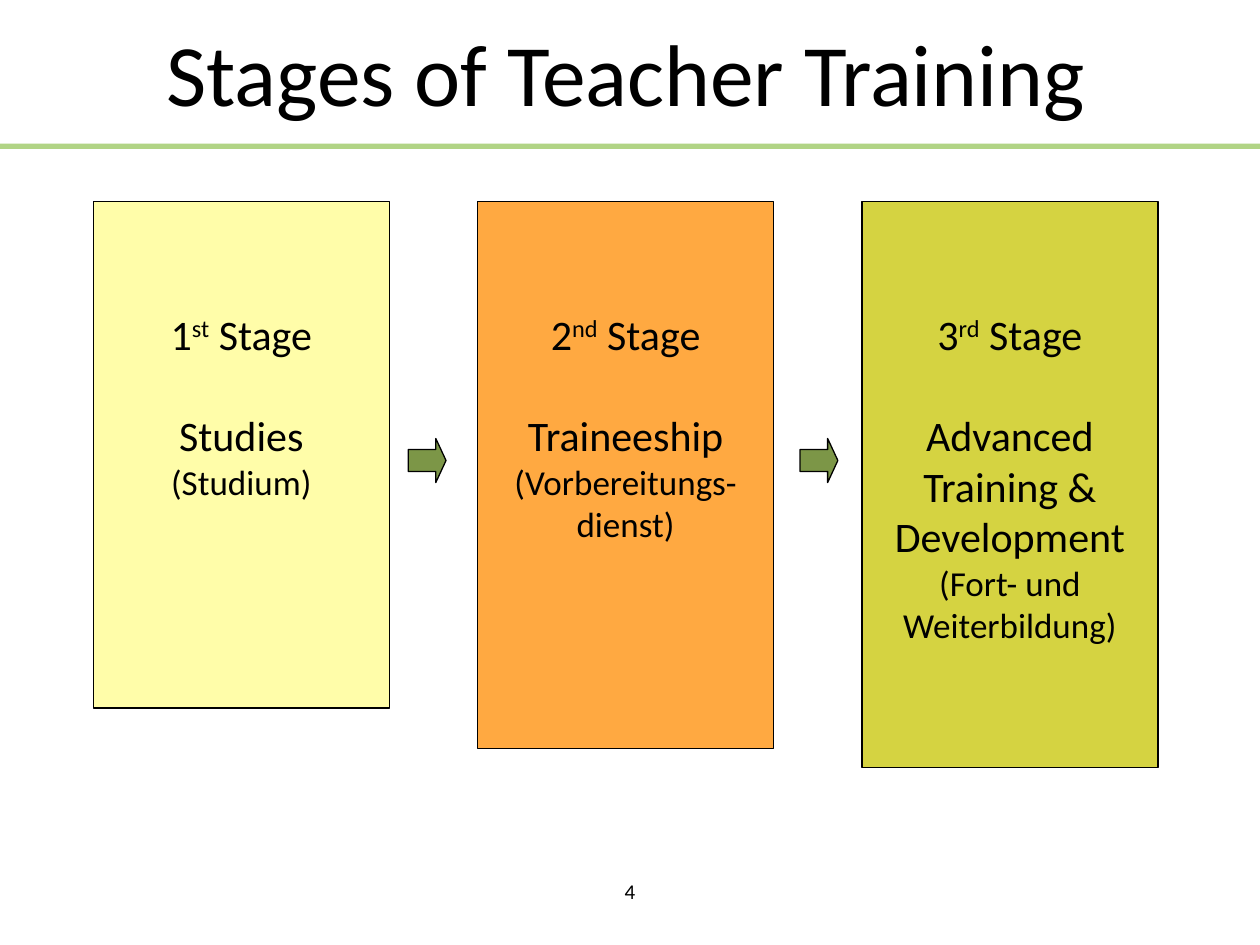
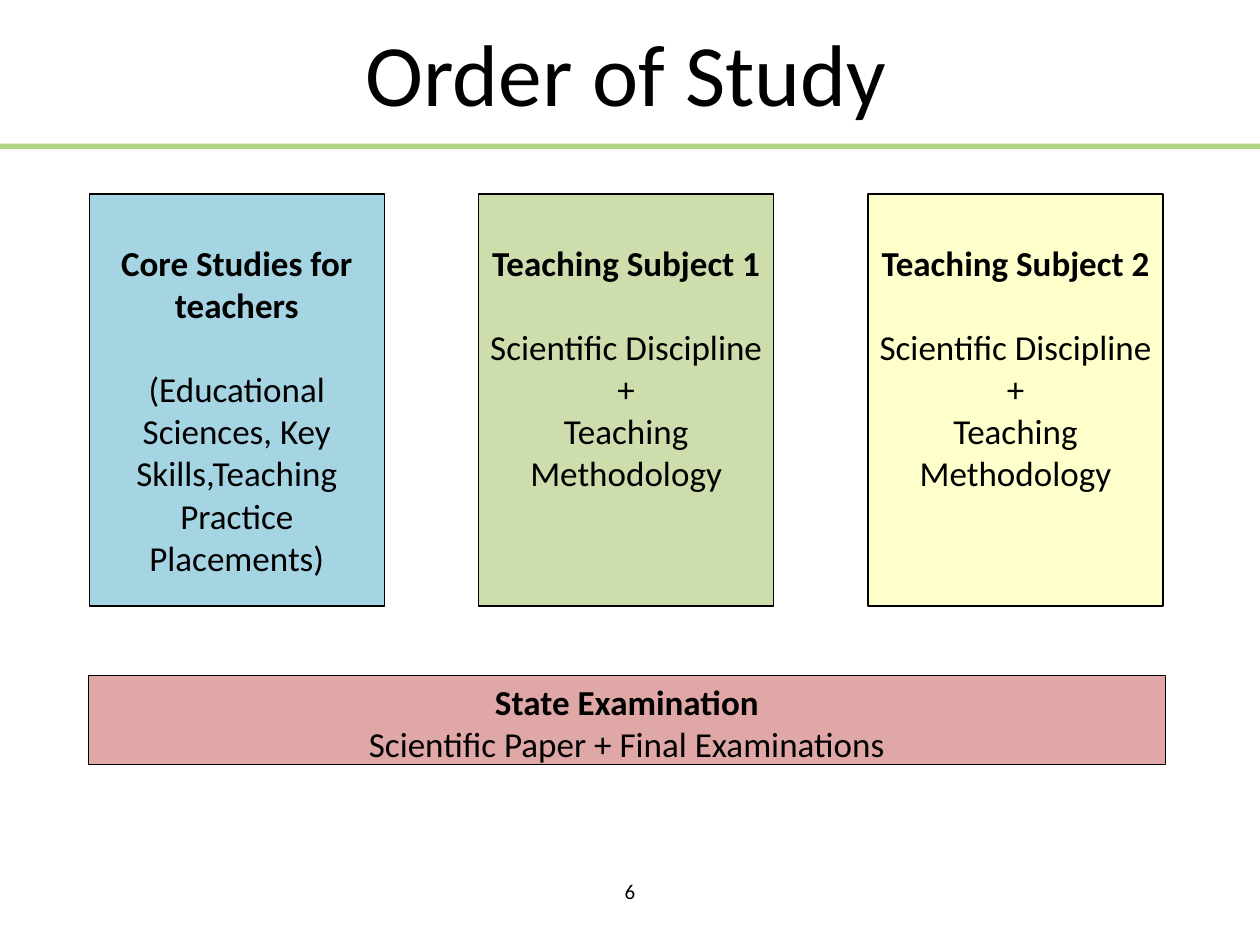
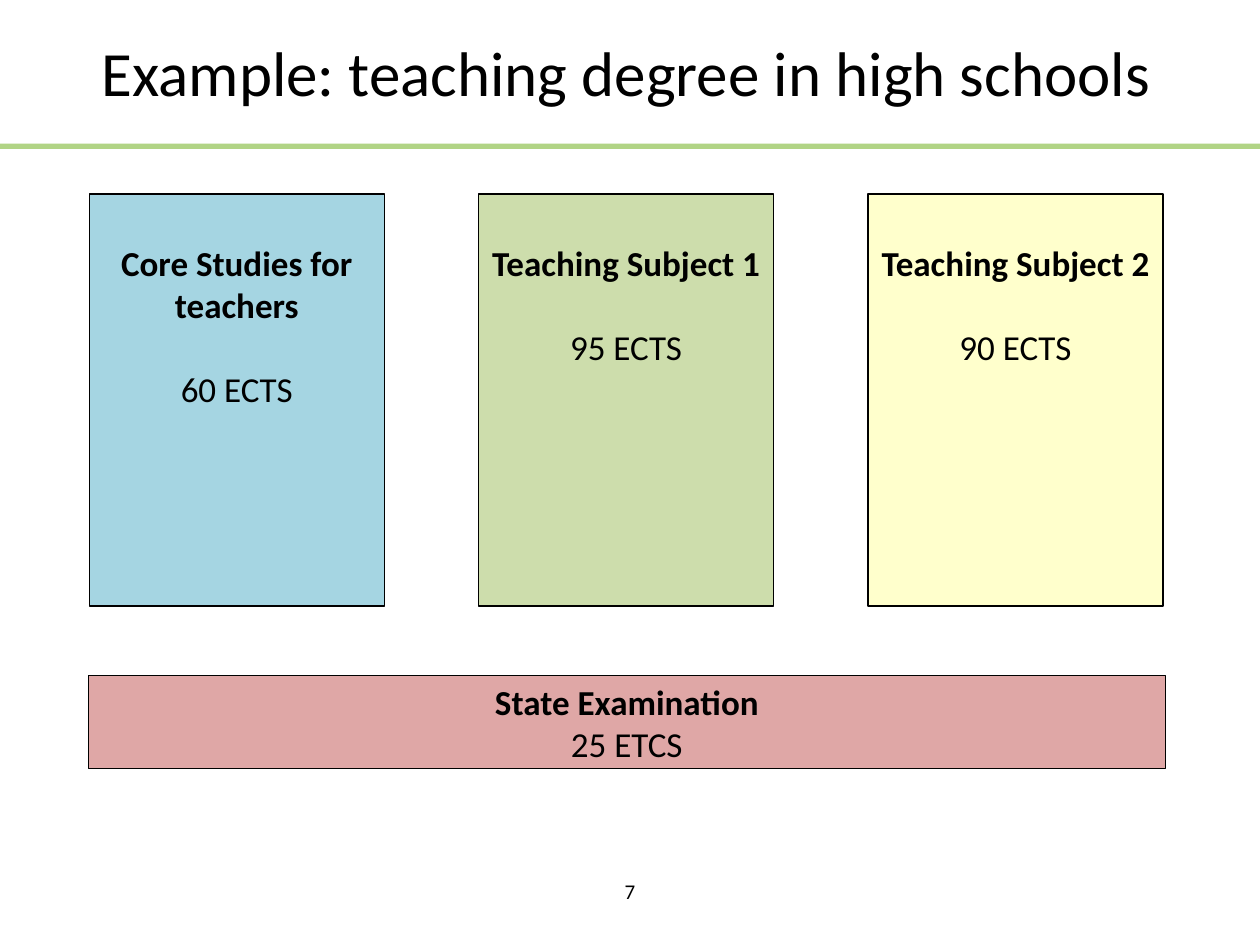
from lxml.etree import SubElement
from pptx import Presentation
from pptx.dml.color import RGBColor
from pptx.enum.shapes import MSO_CONNECTOR as Connector, MSO_SHAPE as Shape
from pptx.enum.text import MSO_ANCHOR as Anchor, MSO_AUTO_SIZE as AutoSize, PP_ALIGN as Align
from pptx.oxml.ns import qn
from pptx.util import Inches, Pt

FONT = "Calibri"
BLACK, RULE_GREEN, ARROW_GREEN = "000000", "91C352", "7C9647"
STAGE_FILLS = ["FFFDA9", "FFA941", "D5D341"]
STUDY_FILLS = ["A5D5E2", "CDDDAC", "FFFFCC"]
EXAM_FILL = "DFA7A6"
STUDY_NAMES = ["Core Studies for teachers", "Teaching Subject 1", "Teaching Subject 2"]
SUBJECT_PARTS = ["Scientific Discipline", "+", "Teaching Methodology"]
LINE_HEIGHT = 1.22
INSET = 0.04

STAGES = [
    ("1^st^ Stage", "Studies", ["(Studium)"], 4.02),
    ("2^nd^ Stage", "Traineeship", ["(Vorbereitungs-dienst)"], 4.34),
    ("3^rd^ Stage", "Advanced Training & Development", ["(Fort- und", "Weiterbildung)"], 4.49),
]
ORDER_DETAILS = [
    ["(Educational Sciences, Key Skills,Teaching Practice Placements)"],
    SUBJECT_PARTS,
    SUBJECT_PARTS,
]
ECTS_DETAILS = [["60 ECTS"], ["95 ECTS"], ["90 ECTS"]]


def color(hex_value):
    """Return the colour for a hex string."""
    return RGBColor.from_string(hex_value)


def set_frame(frame, top_inset=INSET, **formats):
    """Set the margins, wrapping and further formats of a text frame."""
    margins = {"margin_left": INSET, "margin_right": INSET, "margin_bottom": INSET, "margin_top": top_inset}
    for name, value in margins.items():
        setattr(frame, name, Inches(value))
    for name, value in {"word_wrap": True, "auto_size": AutoSize.NONE, **formats}.items():
        setattr(frame, name, value)


def write(frame, lines):
    """Write (text, size, bold, blank line before) lines; carets enclose superscripts."""
    for index, (text, size, bold, gap) in enumerate(lines):
        paragraph = frame.paragraphs[0] if index == 0 else frame.add_paragraph()
        paragraph.alignment = Align.CENTER
        if gap:
            paragraph.space_before = Pt(round(size * LINE_HEIGHT))
        for part, piece in enumerate(text.split("^")):
            run = paragraph.add_run()
            run.text = piece
            for name, value in {"name": FONT, "size": Pt(size), "bold": bold}.items():
                setattr(run.font, name, value)
            run.font.color.rgb = color(BLACK)
            if part % 2:
                run._r.get_or_add_rPr().set("baseline", "31000")


def add_block(slide, kind, box, fill):
    """Add a filled shape with a thin black outline."""
    block = slide.shapes.add_shape(kind, *map(Inches, box))
    block.shadow.inherit = False
    block.fill.solid()
    block.fill.fore_color.rgb = color(fill)
    block.line.color.rgb = color(BLACK)
    block.line.width = Pt(0.75)
    return block


def add_panel(slide, box, fill, lines, blank_above=0):
    """Add a rectangle with top-aligned text below an empty band in inches."""
    panel = add_block(slide, Shape.RECTANGLE, box, fill)
    set_frame(panel.text_frame, INSET + blank_above, vertical_anchor=Anchor.TOP)
    write(panel.text_frame, lines)


def add_rule(slide):
    """Draw the green rule and move it to the layout that all slides share."""
    y = Inches(1.16)
    rule = slide.shapes.add_connector(Connector.STRAIGHT, 0, y, Inches(10), y)
    rule.line.color.rgb = color(RULE_GREEN)
    rule.line.width = Pt(3)
    SubElement(rule.element.xpath(".//a:srgbClr")[0], qn("a:alpha")).set("val", "70000")
    SubElement(rule.element.spPr, qn("a:effectLst"))
    slide.slide_layout.shapes.element.append(rule.element)


def start_slide(prs, title, page, title_size=50):
    """Add a slide with its title and page number."""
    slide = prs.slides.add_slide(prs.slide_layouts[5])
    heading = slide.shapes.title
    for name, value in {"left": 0.44, "top": 0, "width": 9.06, "height": 1.13}.items():
        setattr(heading, name, Inches(value))
    set_frame(heading.text_frame, vertical_anchor=Anchor.MIDDLE)
    write(heading.text_frame, [(title, title_size, False, False)])
    number = slide.shapes.add_textbox(*map(Inches, (4.91, 6.93, 0.18, 0.27)))
    set_frame(number.text_frame, word_wrap=False)
    write(number.text_frame, [(str(page), 12, False, False)])
    return slide


def add_stages(slide, left, top):
    """Place the three stages in a row with arrows between them."""
    for index, ((stage, name, german, height), fill) in enumerate(zip(STAGES, STAGE_FILLS)):
        lines = [(stage, 24, False, False), (name, 24, False, True)]
        lines += [(text, 20, False, False) for text in german]
        add_panel(slide, (left + 3.05 * index, top, 2.35, height), fill, lines, 0.81)
    for index in range(len(STAGES) - 1):
        arrow = add_block(slide, Shape.RIGHT_ARROW, (left + 2.5 + 3.11 * index, top + 1.88, 0.3, 0.35), ARROW_GREEN)
        arrow.adjustments[0] = 0.5
        arrow.adjustments[1] = 0.27


def add_study_plan(slide, left, top, details, exam, exam_height):
    """Place the three study areas above the examination bar."""
    for index, (name, parts, fill) in enumerate(zip(STUDY_NAMES, details, STUDY_FILLS)):
        lines = [(name, 20, True, False)]
        lines += [(text, 20, False, row == 0) for row, text in enumerate(parts)]
        add_panel(slide, (left + 3.09 * index, top, 2.34, 3.27), fill, lines, 0.34)
    exam_lines = [("State Examination", 20, True, False), (exam, 20, False, False)]
    add_panel(slide, (left - 0.01, top + 3.82, 8.55, exam_height), EXAM_FILL, exam_lines)


def main():
    """Build and save the presentation."""
    prs = Presentation()
    prs.slide_width, prs.slide_height = Inches(10), Inches(7.5)
    stages = start_slide(prs, "Stages of Teacher Training", 4)
    add_rule(stages)
    add_stages(stages, 0.74, 1.6)
    order = start_slide(prs, "Order of Study", 6)
    add_study_plan(order, 0.71, 1.54, ORDER_DETAILS, "Scientific Paper + Final Examinations", 0.71)
    example = start_slide(prs, "Example: teaching degree in high schools", 7, 36)
    add_study_plan(example, 0.71, 1.54, ECTS_DETAILS, "25 ETCS", 0.74)
    prs.save("out.pptx")


if __name__ == "__main__":
    main()
